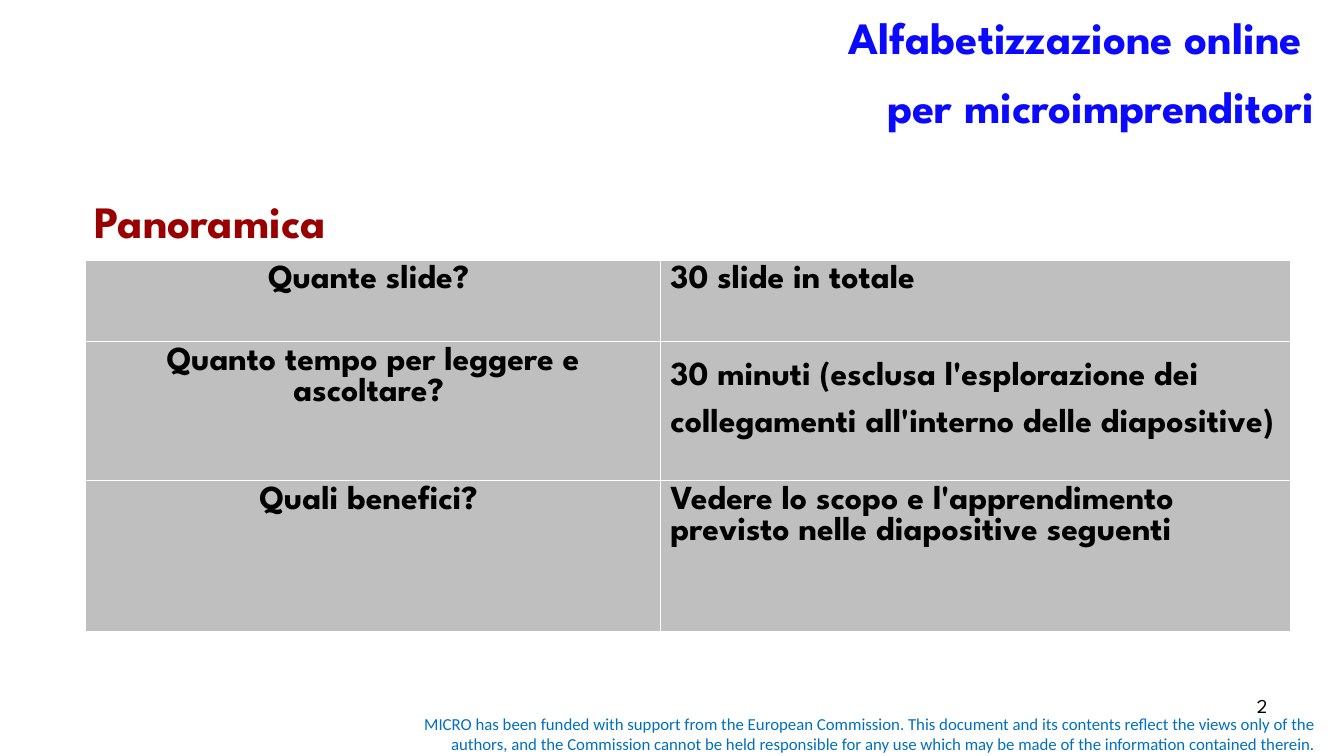
import pptx
import pptx.util
import pptx.dml.color
import pptx.enum.text
import pptx.oxml
import pptx.oxml.ns
from dataclasses import dataclass

Inches = pptx.util.Inches
ALIGN = pptx.enum.text.PP_ALIGN
ANCHOR = pptx.enum.text.MSO_ANCHOR
FIT = pptx.enum.text.MSO_AUTO_SIZE


@dataclass(frozen=True)
class Theme:
    head: str = "League Spartan"
    body: str = "Calibri"
    blue: str = "0B0AFD"
    red: str = "990000"
    sky: str = "0070C0"
    ink: str = "000000"
    gray: str = "BFBFBF"
    white: str = "FFFFFF"
    big: int = 32
    mid: int = 24
    page: int = 14
    note: int = 12


THEME = Theme()
HEADER = ["Alfabetizzazione online ", "per microimprenditori"]
ROWS = [
    ("Quante slide? ", "30 slide in totale", 0.81, None),
    ("Quanto tempo per leggere e ascoltare? ",
     "30 minuti (esclusa l'esplorazione dei collegamenti all'interno delle diapositive)",
     1.38, 1.5),
    ("Quali benefici? ",
     "Vedere lo scopo e l'apprendimento previsto nelle diapositive seguenti",
     1.5, None),
]
COLS = (5.7, 6.25)
FUNDING = (
    "MICRO has been funded with support from the European Commission. "
    "This document and its contents reflect the views only of the authors, "
    "and the Commission cannot be held responsible for any use which may be "
    "made of the information contained therein."
)


def apply(item, style):
    for name, value in style.items():
        setattr(item, name, value)


def rgb(code):
    return pptx.dml.color.RGBColor.from_string(code)


def write(frame, lines, size, color, name=THEME.head, bold=False,
          align=ALIGN.LEFT, space=None):
    for i, line in enumerate(lines):
        para = frame.add_paragraph() if i else frame.paragraphs[0]
        apply(para, {"alignment": align, "line_spacing": space})
        run = para.add_run()
        run.text = line
        apply(run.font, {"name": name, "size": pptx.util.Pt(size), "bold": bold})
        run.font.color.rgb = rgb(color)


def place(shape, box, anchor=ANCHOR.TOP):
    names = ("left", "top", "width", "height")
    apply(shape, dict(zip(names, map(Inches, box))))
    apply(shape.text_frame, {"word_wrap": True, "auto_size": FIT.NONE,
                             "vertical_anchor": anchor})


def add_text(slide, box, text, size, color, anchor=ANCHOR.TOP, **style):
    shape = slide.shapes.add_textbox(*map(Inches, box))
    place(shape, box, anchor)
    write(shape.text_frame, [text], size, color, **style)


def add_title(slide):
    title = slide.shapes.title
    place(title, (1.14, 0, 12, 1.25), ANCHOR.MIDDLE)
    write(title.text_frame, HEADER, THEME.big, THEME.blue,
          bold=True, align=ALIGN.RIGHT, space=1.3)


def frame_cell(cell):
    props = cell._tc.get_or_add_tcPr()
    for i, side in enumerate(("lnL", "lnR", "lnT", "lnB")):
        edge = pptx.oxml.parse_xml(
            f'<a:{side} {pptx.oxml.ns.nsdecls("a")} w="12700"><a:solidFill>'
            f'<a:srgbClr val="{THEME.white}"/></a:solidFill></a:{side}>')
        props.insert(i, edge)


def fill_cell(cell, text, align, space=None):
    cell.fill.solid()
    cell.fill.fore_color.rgb = rgb(THEME.gray)
    write(cell.text_frame, [text], THEME.mid, THEME.ink,
          bold=True, align=align, space=space)
    frame_cell(cell)


def add_grid(slide):
    tall = sum(row[2] for row in ROWS)
    box = (0.85, 2.58, sum(COLS), tall)
    table = slide.shapes.add_table(len(ROWS), len(COLS), *map(Inches, box)).table
    apply(table, {"first_row": False, "horz_banding": False})
    for col, width in zip(table.columns, COLS):
        col.width = Inches(width)
    for i, (ask, reply, height, space) in enumerate(ROWS):
        table.rows[i].height = Inches(height)
        fill_cell(table.cell(i, 0), ask, ALIGN.CENTER)
        fill_cell(table.cell(i, 1), reply, ALIGN.LEFT, space)


def main():
    deck = pptx.Presentation()
    apply(deck, {"slide_width": Inches(13.33), "slide_height": Inches(7.5)})
    slide = deck.slides.add_slide(deck.slide_layouts.get_by_name("Title Only"))
    add_text(slide, (3.75, 7.03, 9.4, 0.5), FUNDING, THEME.note, THEME.sky,
             ANCHOR.MIDDLE, name=THEME.body, align=ALIGN.RIGHT)
    add_grid(slide)
    add_text(slide, (9.56, 6.83, 3.11, 0.52), "2", THEME.page, THEME.ink,
             align=ALIGN.RIGHT)
    add_text(slide, (0.84, 1.71, 2.9, 0.64), "Panoramica", THEME.big, THEME.red,
             bold=True, space=1.3)
    add_title(slide)
    deck.save("out.pptx")


if __name__ == "__main__":
    main()
